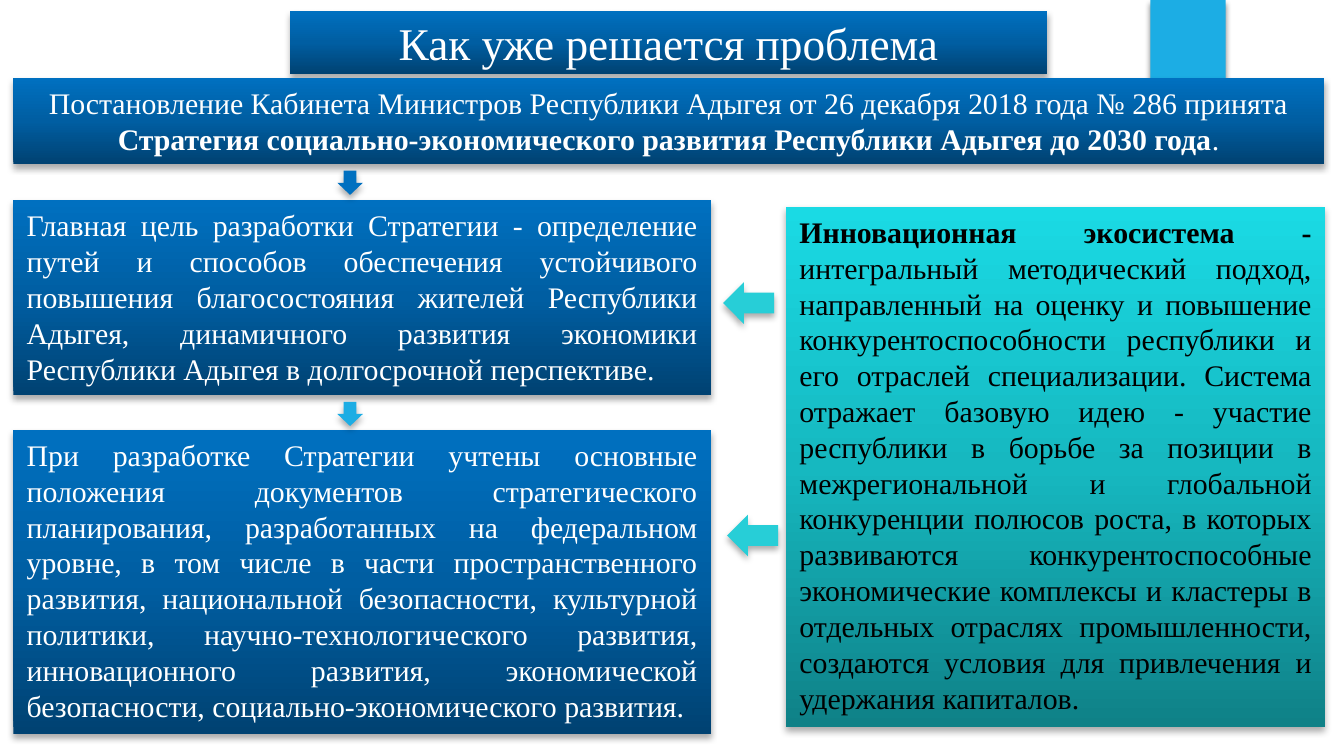
from copy import deepcopy

from lxml.etree import SubElement
from pptx import Presentation
from pptx.dml.color import RGBColor
from pptx.enum.shapes import MSO_SHAPE as Preset
from pptx.enum.text import MSO_ANCHOR as Anchor, PP_ALIGN as Align
from pptx.oxml.ns import qn
from pptx.util import Inches, Pt

FONT = "Times New Roman"
BLUE = ("004272", "005EA2", "0070C0")
TURQUOISE = ("0F8187", "16B8C0", "1ADAE4")
SOFT_SHADOW = (32, 3.5, 2.2)
TAB_SHADOW = (45, 3, 2)
LEFT, COLUMN_WIDTH = 0.1, 5.19

PANELS = [
    ((2.16, 0.08, 5.63, 0.47), BLUE, "FFFFFF", 24.3, Align.CENTER, Anchor.MIDDLE,
     [("Как уже решается проблема", False)]),
    ((LEFT, 0.58, 9.75, 0.64), BLUE, "FFFFFF", 16, Align.CENTER, Anchor.TOP,
     [("Постановление Кабинета Министров Республики Адыгея от 26 декабря 2018 года № 286 принята ", False),
      ("Стратегия социально-экономического развития Республики Адыгея до 2030 года", True),
      (".", False)]),
    ((LEFT, 1.49, COLUMN_WIDTH, 1.45), BLUE, "FFFFFF", 16, Align.JUSTIFY, Anchor.TOP,
     [("Главная цель разработки Стратегии - определение путей и способов обеспечения "
       "устойчивого повышения благосостояния жителей Республики Адыгея, динамичного "
       "развития экономики Республики Адыгея в долгосрочной перспективе.", False)]),
    ((LEFT, 3.2, COLUMN_WIDTH, 2.26), BLUE, "FFFFFF", 16, Align.JUSTIFY, Anchor.TOP,
     [("При разработке Стратегии учтены основные положения документов стратегического "
       "планирования, разработанных на федеральном уровне, в том числе в части "
       "пространственного развития, национальной безопасности, культурной политики, "
       "научно-технологического развития, инновационного развития, экономической "
       "безопасности, социально-экономического развития.", False)]),
    ((5.85, 1.54, 4.01, 3.87), TURQUOISE, "000000", 16, Align.JUSTIFY, Anchor.TOP,
     [("Инновационная экосистема -", True),
      (" интегральный методический подход, направленный на оценку и повышение "
       "конкурентоспособности республики и его отраслей специализации. Система отражает "
       "базовую идею - участие республики в борьбе за позиции в межрегиональной и "
       "глобальной конкуренции полюсов роста, в которых развиваются конкурентоспособные "
       "экономические комплексы и кластеры в отдельных отраслях промышленности, создаются "
       "условия для привлечения и удержания капиталов.", False)]),
]

ARROWS = [
    (Preset.LEFT_ARROW, (5.38, 2.1, 0.38, 0.31), "27CED7"),
    (Preset.LEFT_ARROW, (5.41, 3.83, 0.38, 0.31), "27CED7"),
    (Preset.DOWN_ARROW, (2.51, 1.27, 0.19, 0.18), "0070C0"),
    (Preset.DOWN_ARROW, (2.51, 2.99, 0.19, 0.18), "1CADE4"),
]


def color(value):
    return RGBColor.from_string(value)


def add_shadow(shape, opacity, blur, distance):
    shape.shadow.inherit = False
    effects = shape._element.spPr.find(qn("a:effectLst"))
    outer = SubElement(effects, qn("a:outerShdw"), blurRad=str(Pt(blur)),
                       dist=str(Pt(distance)), dir="5400000", rotWithShape="0")
    tone = SubElement(outer, qn("a:srgbClr"), val="000000")
    SubElement(tone, qn("a:alpha"), val=str(opacity * 1000))


def add_shape(slide, preset, box, shadow=SOFT_SHADOW):
    shape = slide.shapes.add_shape(preset, *map(Inches, box))
    shape.line.fill.background()
    add_shadow(shape, *shadow)
    return shape


def fill_solid(shape, value):
    shape.fill.solid()
    shape.fill.fore_color.rgb = color(value)


def fill_gradient(shape, values):
    shape.fill.gradient()
    shape.fill.gradient_angle = 90
    stops = shape._element.spPr.find(qn("a:gradFill")).find(qn("a:gsLst"))
    stops.append(deepcopy(stops[0]))
    for index, (stop, value) in enumerate(zip(shape.fill.gradient_stops, values)):
        stop.position = index / (len(values) - 1)
        stop.color.rgb = color(value)


def add_panel(slide, box, gradient, text_color, size, alignment, anchor, runs):
    shape = add_shape(slide, Preset.RECTANGLE, box)
    fill_gradient(shape, gradient)
    frame = shape.text_frame
    frame.word_wrap = True
    frame.vertical_anchor = anchor
    paragraph = frame.paragraphs[0]
    paragraph.alignment = alignment
    for text, bold in runs:
        run = paragraph.add_run()
        run.text = text
        run.font.name = FONT
        run.font.size = Pt(size)
        run.font.bold = bold
        run.font.color.rgb = color(text_color)


def main():
    presentation = Presentation()
    presentation.slide_width = Inches(10)
    presentation.slide_height = presentation.slide_width * 9 // 16
    slide = presentation.slides.add_slide(presentation.slide_layouts[6])
    tab = add_shape(slide, Preset.RECTANGLE, (8.56, 0, 0.56, 0.94), TAB_SHADOW)
    fill_solid(tab, "1CADE4")
    for panel in PANELS:
        add_panel(slide, *panel)
    for preset, box, value in ARROWS:
        fill_solid(add_shape(slide, preset, box), value)
    presentation.save("out.pptx")


if __name__ == "__main__":
    main()
